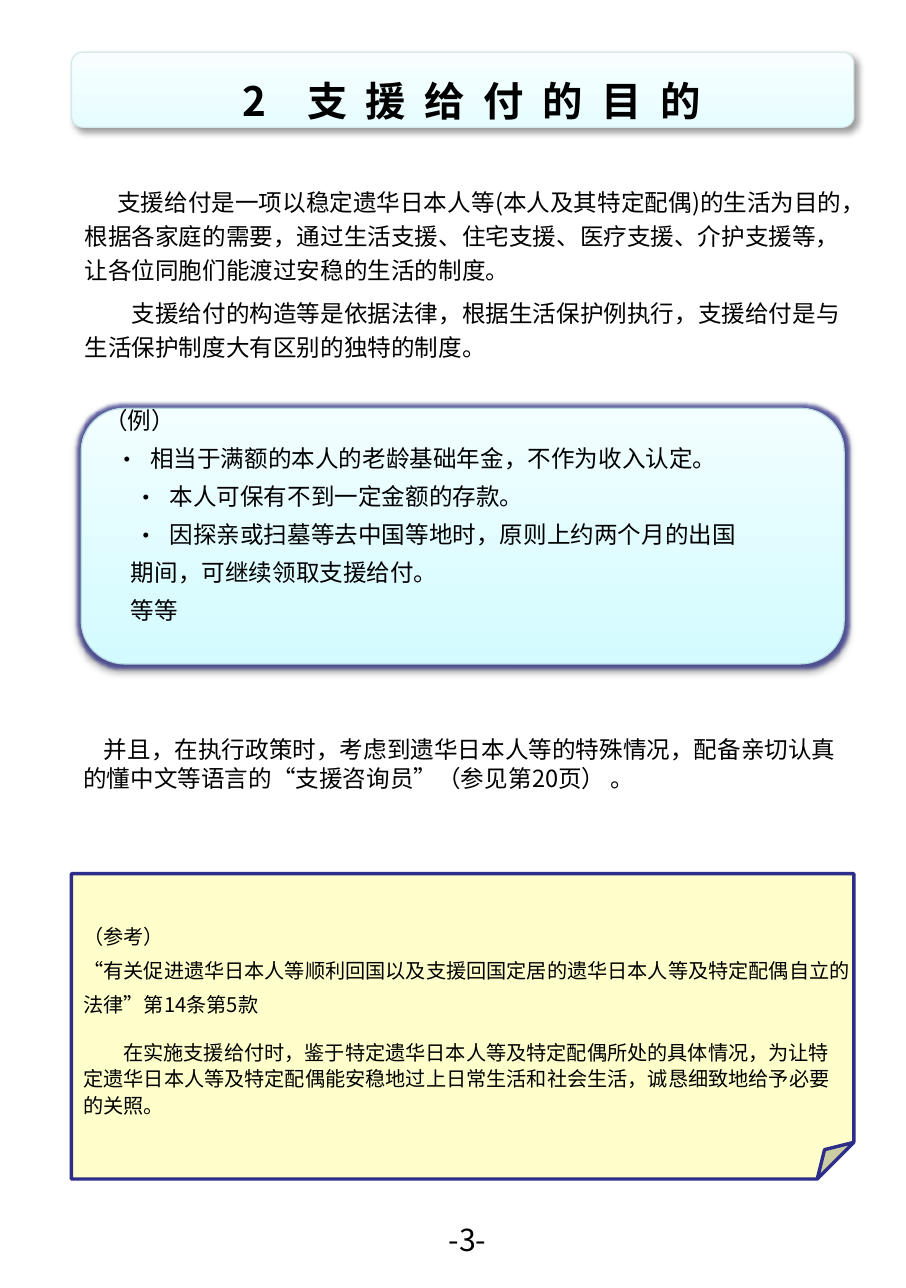
from lxml.etree import SubElement
from pptx import Presentation
from pptx.dml.color import RGBColor
from pptx.enum.shapes import MSO_SHAPE as Preset
from pptx.enum.text import MSO_ANCHOR as Anchor, MSO_AUTO_SIZE as AutoSize, PP_ALIGN as Align
from pptx.oxml.ns import qn
from pptx.util import Inches, Pt

# Content: each paragraph is (text, format values)
TITLE_NUMBER, TITLE_WORDS = "2　", "支援给付的目的"
PAGE_NUMBER = [("-3-", {"align": Align.CENTER})]
INTRO = [
    ("支援给付是一项以稳定遗华日本人等(本人及其特定配偶)的生活为目的，根据各家庭的需要，"
     "通过生活支援、住宅支援、医疗支援、介护支援等，让各位同胞们能渡过安稳的生活的制度。",
     {"first": 0.27, "pitch": 20}),
    ("支援给付的构造等是依据法律，根据生活保护例执行，支援给付是与生活保护制度大有区别的独特的制度。",
     {"first": 0.39, "pitch": 20, "before": 5.9}),
]
EXAMPLES = [
    ("（例）", {}),
    ("相当于满额的本人的老龄基础年金，不作为收入认定。", {"left": 0.38, "bullet": "·"}),
    ("本人可保有不到一定金额的存款。", {"left": 0.54, "bullet": "·"}),
    ("因探亲或扫墓等去中国等地时，原则上约两个月的出国", {"left": 0.54, "bullet": "·"}),
    ("期间，可继续领取支援给付。", {"left": 0.22}),
    ("等等", {"left": 0.22}),
]
CLOSING = [
    ("并且，在执行政策时，考虑到遗华日本人等的特殊情况，配备亲切认真的懂中文等语言的"
     "“支援咨询员”（参见第20页） 。", {"first": 0.17, "pitch": 16.8}),
]
REFERENCE = [
    ("（参考）", {"pitch": 20.5}),
    ("“有关促进遗华日本人等顺利回国以及支援回国定居的遗华日本人等及特定配偶自立的\v"
     "法律”第14条第5款", {"pitch": 20.5}),
    ("在实施支援给付时，鉴于特定遗华日本人等及特定配偶所处的具体情况，为让特\v"
     "定遗华日本人等及特定配偶能安稳地过上日常生活和社会生活，诚恳细致地给予必要\v"
     "的关照。", {"first": 0.33, "pitch": 16, "before": 12}),
]

THEME = {
    "font": "Noto Sans CJK SC", "text": "000000",
    "title": 24, "body": 14, "note": 12, "page": 18,
    "banner": ("E6FDFF", "F8FEFF"), "banner_line": "D5E8EA",
    "example": ("D3FBFF", "F2FEFF"), "example_line": "B6DCDF",
    "reference": "FFFFCC", "navy": "2D2D8A", "shadow": "000000",
}

# Left, top, width, height in percent of the slide
PLACES = {
    "banner": (7.89, 4.05, 86.36, 5.83),
    "title": (7.89, 4.89, 86.36, 5.83),
    "intro": (8.02, 13.73, 88.37, 17.97),
    "example": (8.96, 31.7, 84.22, 19.85),
    "list": (11.5, 30.76, 80, 16),
    "closing": (7.89, 56.63, 86.36, 5.46),
    "reference": (7.89, 67.83, 86.36, 23.71),
    "page": (44.79, 94.36, 13.64, 3.76),
}
INSETS = (0.1, 0.05, 0.1, 0.05)
HANG = 0.29

deck = Presentation()
deck.slide_width, deck.slide_height = Inches(7.48), Inches(10.63)
slide = deck.slides.add_slide(deck.slide_layouts[1])


def place(part):
    x, y, w, h = PLACES[part]
    across, down = deck.slide_width / 100, deck.slide_height / 100
    return [int(v) for v in (x * across, y * down, w * across, h * down)]


def move(holder, part):
    holder.left, holder.top, holder.width, holder.height = place(part)
    slide.shapes._spTree.append(holder._element)  # in front of its panel


def frame(holder, insets=INSETS, anchor=Anchor.TOP):
    text = holder.text_frame
    sides = ("margin_left", "margin_top", "margin_right", "margin_bottom")
    values = {side: Inches(v) for side, v in zip(sides, insets)}
    values |= {"auto_size": AutoSize.NONE, "word_wrap": True, "vertical_anchor": anchor}
    for key, value in values.items():
        setattr(text, key, value)
    return text


def style(run, size, bold=False):
    run.font.color.rgb = RGBColor.from_string(THEME["text"])
    for key, value in {"size": Pt(size), "bold": bold, "name": THEME["font"]}.items():
        setattr(run.font, key, value)
    run.font._element.find(qn("a:latin")).addnext(
        SubElement(run.font._element, qn("a:ea"), typeface=THEME["font"]))


def write(text, paragraphs, size, pitch=None):
    for index, (words, fmt) in enumerate(paragraphs):
        line = text.add_paragraph() if index else text.paragraphs[0]
        line.text = words
        height = fmt.get("pitch", pitch)
        values = {"alignment": fmt.get("align", Align.LEFT),
                  "space_before": Pt(fmt.get("before", 0)),
                  "line_spacing": Pt(height) if height else 1.0}
        for key, value in values.items():
            setattr(line, key, value)
        bullet = fmt.get("bullet")
        first = -HANG if bullet else fmt.get("first", 0)
        props = line._p.get_or_add_pPr()
        props.set("marL", str(Inches(fmt.get("left", 0))))
        props.set("indent", str(Inches(first)))
        if bullet:
            SubElement(props, qn("a:buFont"), typeface=THEME["font"])
            SubElement(props, qn("a:buChar"), char=bullet)
        else:
            SubElement(props, qn("a:buNone"))
        for run in line.runs:
            style(run, size)


def panel(part, preset, fill, line, width, adjust):
    shape = slide.shapes.add_shape(preset, *place(part))
    guides = shape._element.spPr.find(qn("a:prstGeom")).get_or_add_avLst()
    for guide in list(guides):
        guides.remove(guide)
    SubElement(guides, qn("a:gd"), name="adj", fmla=f"val {round(adjust * 100000)}")
    shape.shadow.inherit = False
    if isinstance(fill, tuple):
        shape.fill.gradient()
        shape.fill.gradient_angle = 90
        for stop, color, position in zip(shape.fill.gradient_stops, fill, (0, 1)):
            stop.color.rgb, stop.position = RGBColor.from_string(color), position
    else:
        shape.fill.solid()
        shape.fill.fore_color.rgb = RGBColor.from_string(fill)
    shape.line.color.rgb = RGBColor.from_string(line)
    shape.line.width = Pt(width)
    return shape


def effect(shape, kind, color, alpha, **values):
    effects = shape._element.spPr.find(qn("a:effectLst"))
    node = SubElement(effects, qn(kind), {k: str(int(v)) for k, v in values.items()})
    tone = SubElement(node, qn("a:srgbClr"), val=color)
    SubElement(tone, qn("a:alpha"), val=str(alpha * 1000))


# Title banner
banner = panel("banner", Preset.ROUNDED_RECTANGLE, THEME["banner"], THEME["banner_line"], 0.75, 0.15)
effect(banner, "a:outerShdw", THEME["shadow"], 40, blurRad=Pt(4), dist=Pt(3), dir=45 * 60000)
title = slide.shapes.title
move(title, "title")
heading = frame(title, (0.15, 0, 0, 0), Anchor.MIDDLE).paragraphs[0]
heading.alignment = Align.CENTER
for words, tracking in ((TITLE_NUMBER, 0), (TITLE_WORDS, 11)):
    run = heading.add_run()
    run.text = words
    style(run, THEME["title"], bold=True)
    run.font._element.set("spc", str(tracking * 100))

# Example panel with its list
example = panel("example", Preset.ROUNDED_RECTANGLE, THEME["example"], THEME["example_line"], 0.75, 0.17)
effect(example, "a:glow", THEME["navy"], 70, rad=Pt(4))
effect(example, "a:outerShdw", THEME["shadow"], 38, blurRad=Pt(3.1), dist=Pt(1.6), dir=90 * 60000)
examples = slide.placeholders[1]
move(examples, "list")
write(frame(examples, (0, 0, 0, 0)), EXAMPLES, THEME["body"], 22.6)

# Reference note
reference = panel("reference", Preset.FOLDED_CORNER, THEME["reference"], THEME["navy"], 2, 0.12)
write(frame(reference, (0.1, 0.33, 0, 0)), REFERENCE, THEME["note"])

# Running text and page number
for part, paragraphs, size in (("intro", INTRO, "body"), ("closing", CLOSING, "body"),
                               ("page", PAGE_NUMBER, "page")):
    write(frame(slide.shapes.add_textbox(*place(part))), paragraphs, THEME[size])

deck.save("out.pptx")
